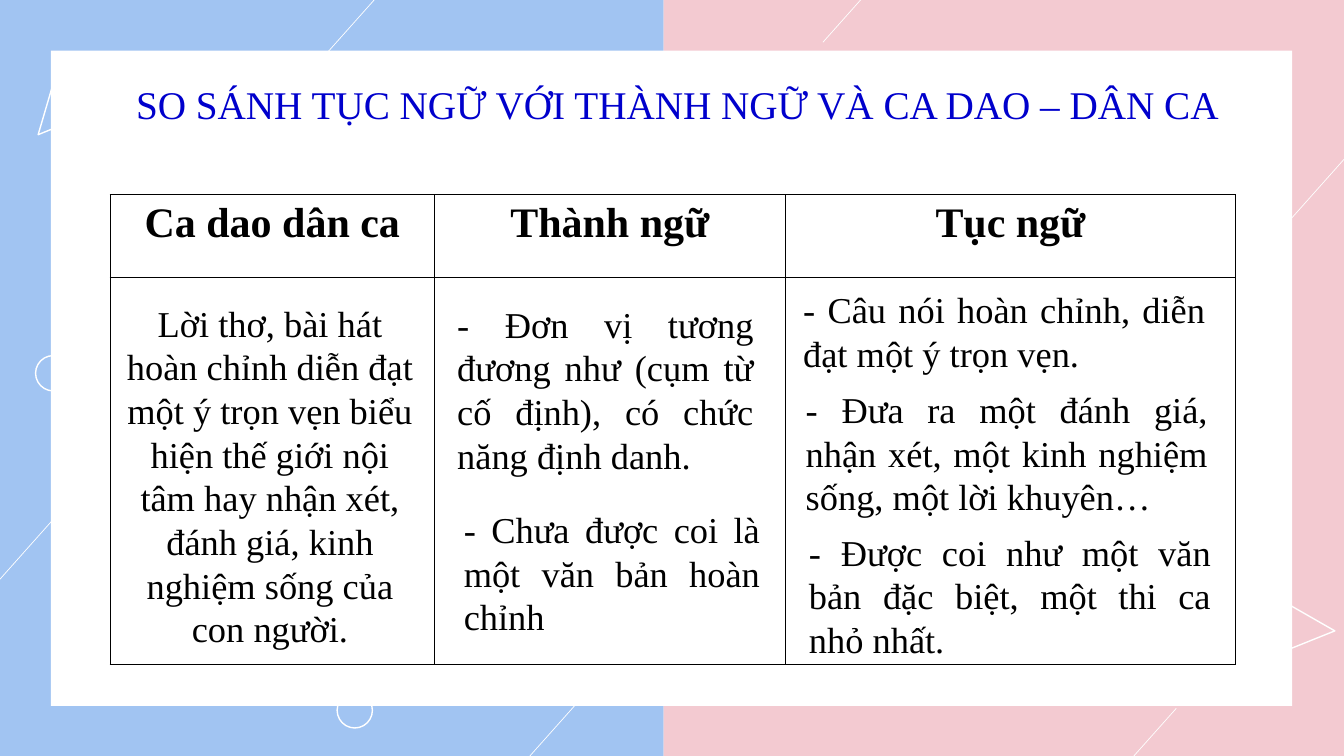
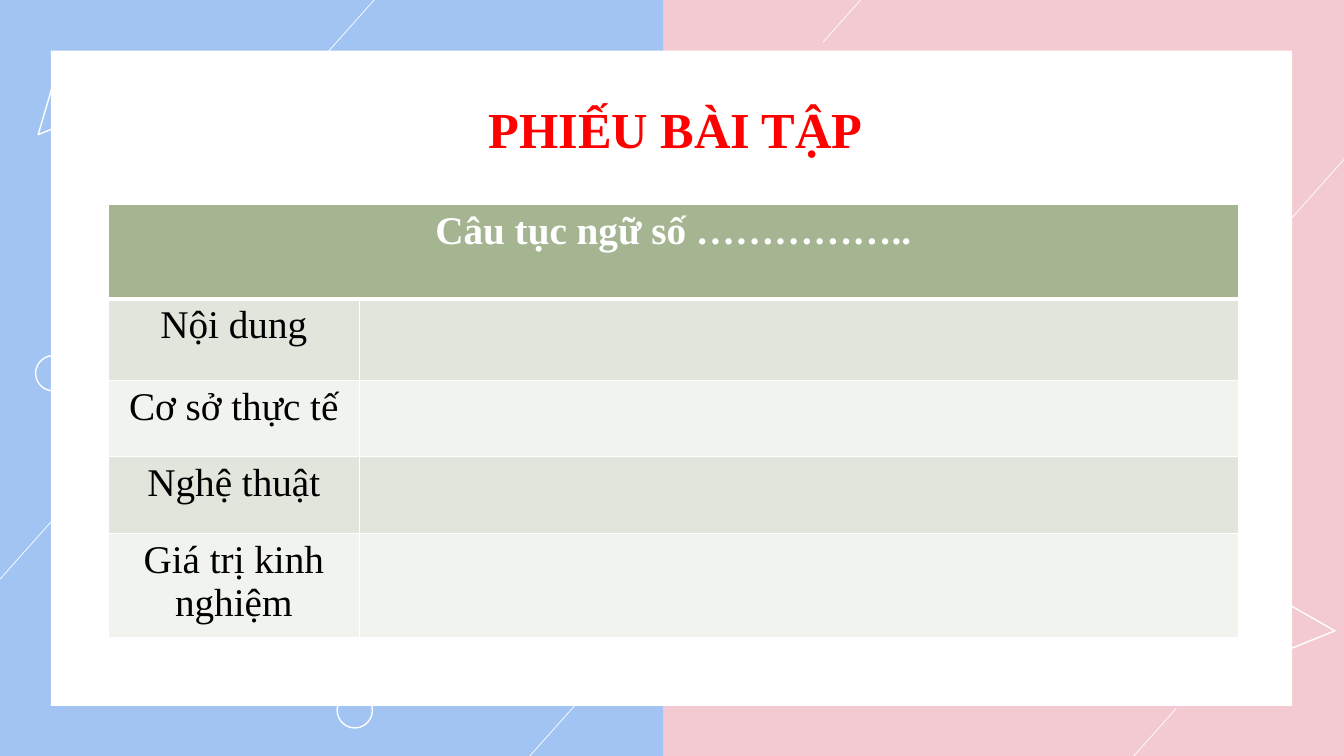
from lxml import etree
from pptx import Presentation
from pptx.dml.color import RGBColor
from pptx.enum.shapes import MSO_CONNECTOR, MSO_SHAPE
from pptx.enum.text import PP_ALIGN
from pptx.oxml.ns import qn
from pptx.util import Pt

RECTANGLE, TRIANGLE, OVAL = MSO_SHAPE.RECTANGLE, MSO_SHAPE.ISOSCELES_TRIANGLE, MSO_SHAPE.OVAL
STRAIGHT = MSO_CONNECTOR.STRAIGHT
CENTER, JUSTIFY = PP_ALIGN.CENTER, PP_ALIGN.JUSTIFY

# Shared look
FONT = "Times New Roman"
WIDTH, HEIGHT = 960, 540
BLUE, PINK, WHITE, BLACK = "A1C4F2", "F3CAD1", "FFFFFF", "000000"
NAVY, RED, GREEN = "0000CC", "FF0000", "A5B592"
ROW_TINTS = ("E1E5DC", "F0F3EE")
SPLIT = 474
CARD = (36.3, 36.2, 886.7, 468)
TRIANGLES = [(17.3, 44.6), (883.4, 423.2)]
CIRCLES = [(25.4, 254), (240.8, 494.8)]
DIAGONAL_STARTS = [(199.3, 76.3), (587.8, 30.2), (315.6, 610.6),
                   (731.7, 627.8), (917.3, 161.8), (-67, 488.9)]
DIAGONAL_RUN, DIAGONAL_RISE = 108.5, 121.8

# Slide 1: comparison
COMPARE_TITLE = "SO SÁNH TỤC NGỮ VỚI THÀNH NGỮ VÀ CA DAO – DÂN CA"
GENRES = ["Ca dao dân ca", "Thành ngữ", "Tục ngữ"]
COMPARE_AT = (78.7, 139)
COMPARE_COLS, COMPARE_ROWS = [231.7, 250.6, 321.8], [59, 276.5]
FEATURES = [
    ((82.8, 211.3, 220.3, 259.2), CENTER,
     "Lời thơ, bài hát hoàn chỉnh diễn đạt một ý trọn vẹn biểu hiện thế giới nội tâm "
     "hay nhận xét, đánh giá, kinh nghiệm sống của con người."),
    ((319.5, 212.1, 226.1, 133.2), JUSTIFY,
     "- Đơn vị tương đương như (cụm từ cố định), có chức năng định danh."),
    ((324.2, 358.6, 226.1, 101.5), JUSTIFY, "- Chưa được coi là một văn bản hoàn chỉnh"),
    ((566.6, 201.6, 301.7, 70.6), JUSTIFY, "- Câu nói hoàn chỉnh, diễn đạt một ý trọn vẹn."),
    ((568.4, 273.1, 301.7, 101.5), JUSTIFY,
     "- Đưa ra một đánh giá, nhận xét, một kinh nghiệm sống, một lời khuyên…"),
    ((570.7, 374.8, 301.7, 101.5), JUSTIFY,
     "- Được coi như một văn bản đặc biệt, một thi ca nhỏ nhất."),
]

# Slide 2: worksheet
SHEET_TITLE = "PHIẾU BÀI TẬP"
SHEET_HEADER = "Câu tục ngữ số …………….."
SHEET_LABELS = ["Nội dung", "Cơ sở thực tế", "Nghệ thuật", "Giá trị kinh nghiệm"]
SHEET_AT = (77.1, 146)
SHEET_COLS, SHEET_ROWS = [179.8, 627.8], [67.5, 58, 54.8, 54.8, 74.3]


def color(hex_text):
    return RGBColor.from_string(hex_text)


def write(frame, text, size=26, ink=BLACK, bold=False, align=CENTER):
    frame.word_wrap = True
    paragraph = frame.paragraphs[0]
    paragraph.alignment = align
    run = paragraph.add_run()
    run.text = text
    font = run.font
    font.name, font.size, font.bold = FONT, Pt(size), bold
    font.color.rgb = color(ink)


def add_text(slide, box, text, **style):
    write(slide.shapes.add_textbox(*map(Pt, box)).text_frame, text, **style)


def add_figure(slide, kind, box, fill=None, rotation=0):
    """Filled without a line, or outlined in white without a fill."""
    figure = slide.shapes.add_shape(kind, *map(Pt, box))
    figure.shadow.inherit = False
    figure.rotation = rotation
    if fill:
        figure.fill.solid()
        figure.fill.fore_color.rgb = color(fill)
        figure.line.fill.background()
    else:
        figure.fill.background()
        figure.line.color.rgb = color(WHITE)
        figure.line.width = Pt(1)


def add_diagonal(slide, x, y):
    """Draw a rising diagonal that runs past the edge of the slide."""
    ends = (x, y, x + DIAGONAL_RUN, y - DIAGONAL_RISE)
    line = slide.shapes.add_connector(STRAIGHT, *map(Pt, ends))
    line.line.color.rgb = color(WHITE)
    line.line.width = Pt(0.5)
    etree.SubElement(line._element.spPr, qn("a:effectLst"))


def add_framed_slide(deck):
    slide = deck.slides.add_slide(deck.slide_layouts[6])
    add_figure(slide, RECTANGLE, (0, 0, SPLIT, HEIGHT), BLUE)
    add_figure(slide, RECTANGLE, (SPLIT, 0, WIDTH - SPLIT, HEIGHT), PINK)
    for corner in TRIANGLES:
        add_figure(slide, TRIANGLE, (*corner, 64.8, 41), rotation=338.1)
    for corner in CIRCLES:
        add_figure(slide, OVAL, (*corner, 25.2, 25.2))
    for start in DIAGONAL_STARTS:
        add_diagonal(slide, *start)
    add_figure(slide, RECTANGLE, CARD, WHITE)
    return slide


def set_borders(cell, ink, **widths):
    """Set the four cell borders, 1 pt unless a side is given its own width."""
    properties = cell._tc.get_or_add_tcPr()
    for index, side in enumerate("LRTB"):
        border = etree.Element(qn(f"a:ln{side}"), w=str(Pt(widths.get(side, 1))))
        fill = etree.SubElement(border, qn("a:solidFill"))
        etree.SubElement(fill, qn("a:srgbClr"), val=ink)
        properties.insert(index, border)


def add_grid(slide, corner, cols, rows):
    frame = slide.shapes.add_table(len(rows), len(cols), *map(Pt, corner),
                                   Pt(sum(cols)), Pt(sum(rows)))
    grid = frame.table
    for column, width in zip(grid.columns, cols):
        column.width = Pt(width)
    for row, height in zip(grid.rows, rows):
        row.height = Pt(height)
    return grid


def fill_cell(cell, fill):
    cell.fill.solid()
    cell.fill.fore_color.rgb = color(fill)


def build_comparison(deck):
    slide = add_framed_slide(deck)
    add_text(slide, (85.2, 53.8, 797, 41), COMPARE_TITLE, size=28, ink=NAVY)
    grid = add_grid(slide, COMPARE_AT, COMPARE_COLS, COMPARE_ROWS)
    for cell in grid.iter_cells():
        cell.fill.background()
        set_borders(cell, BLACK)
    for column, genre in enumerate(GENRES):
        write(grid.cell(0, column).text_frame, genre, size=30, bold=True)
    for box, align, feature in FEATURES:
        add_text(slide, box, feature, align=align)


def build_worksheet(deck):
    slide = add_framed_slide(deck)
    add_text(slide, (170.6, 66.6, 624.2, 51.1), SHEET_TITLE, size=36, ink=RED, bold=True)
    grid = add_grid(slide, SHEET_AT, SHEET_COLS, SHEET_ROWS)
    # Header across both columns
    header = grid.cell(0, 0)
    header.merge(grid.cell(0, 1))
    write(header.text_frame, SHEET_HEADER, size=28, ink=WHITE, bold=True)
    for column in range(len(SHEET_COLS)):
        fill_cell(grid.cell(0, column), GREEN)
        set_borders(grid.cell(0, column), WHITE, B=3)
    # Labels with room for answers
    for row, label in enumerate(SHEET_LABELS, start=1):
        write(grid.cell(row, 0).text_frame, label, size=28)
        for column in range(len(SHEET_COLS)):
            cell = grid.cell(row, column)
            fill_cell(cell, ROW_TINTS[(row - 1) % 2])
            set_borders(cell, WHITE, T=3 if row == 1 else 1)


def main():
    deck = Presentation()
    deck.slide_width, deck.slide_height = Pt(WIDTH), Pt(HEIGHT)
    build_comparison(deck)
    build_worksheet(deck)
    deck.save("out.pptx")


if __name__ == "__main__":
    main()
